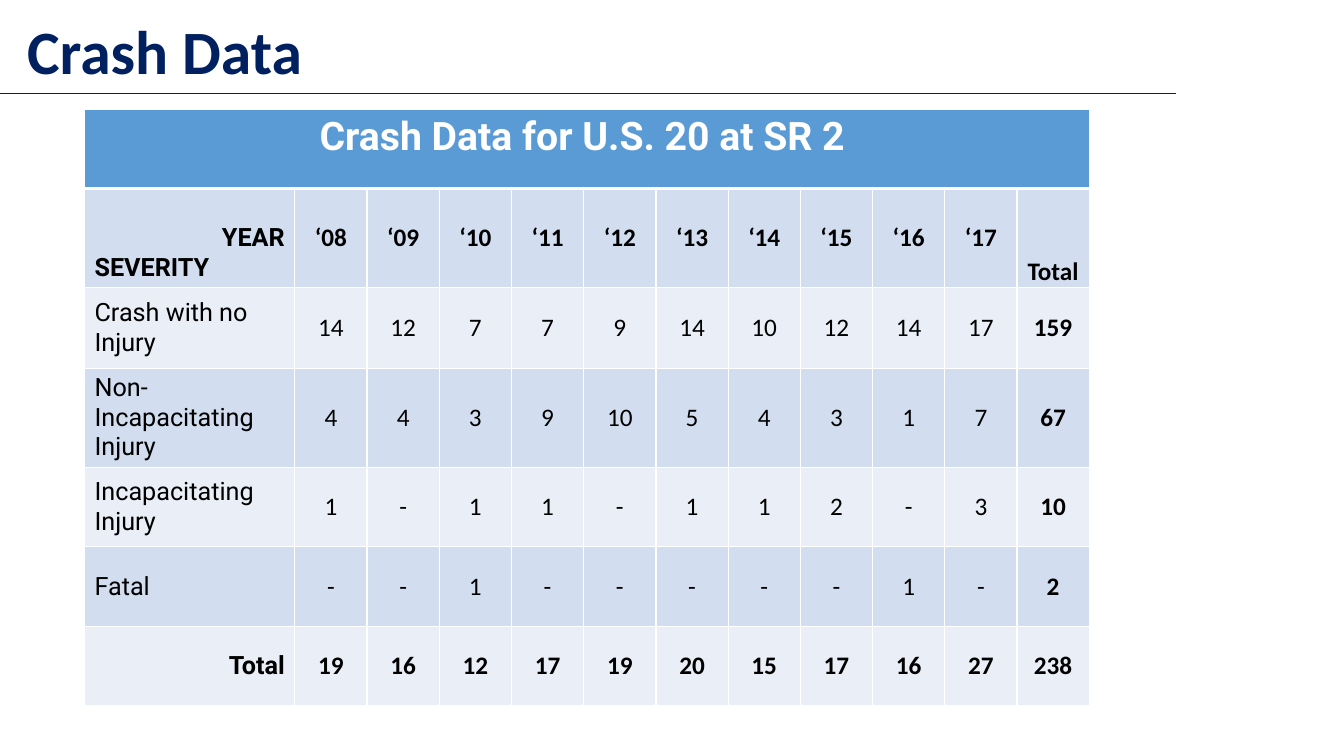
import dataclasses

import pptx
import pptx.dml.color
import pptx.enum.shapes
import pptx.enum.text
import pptx.oxml
import pptx.oxml.ns
import pptx.presentation
import pptx.slide
import pptx.table
import pptx.text.text
import pptx.util

Cm = pptx.util.Cm
Pt = pptx.util.Pt
Align = pptx.enum.text.PP_ALIGN
Anchor = pptx.enum.text.MSO_ANCHOR

COLORS = {
    "navy": "002060",
    "header": "5B9BD5",
    "dark_band": "D2DEEF",
    "light_band": "EAEFF7",
    "white": "FFFFFF",
    "black": "000000",
}
LABEL_WIDTH = Cm(5.3)
YEAR_WIDTH = Cm(1.82)
HEADING_HEIGHT = Cm(2)
YEARS = [f"‘{year:02d}" for year in range(8, 18)]


@dataclasses.dataclass(frozen=True)
class CrashRow:
    label: str
    values: list[str]
    height: float = 2
    bold: bool = False


@dataclasses.dataclass(frozen=True)
class TextStyle:
    font: str = "Calibri"
    size: float = 18
    bold: bool = False
    color: str = "black"
    alignment: Align = Align.CENTER


ROWS = [
    CrashRow("YEAR\nSEVERITY", YEARS + ["Total"], 2.5, True),
    CrashRow("Crash with no Injury", "14 12 7 7 9 14 10 12 14 17 159".split(), 2.03),
    CrashRow("Non-Incapacitating Injury", "4 4 3 9 10 5 4 3 1 7 67".split(), 2.5),
    CrashRow("Incapacitating Injury", "1 - 1 1 - 1 1 2 - 3 10".split()),
    CrashRow("Fatal", "- - 1 - - - - - 1 - 2".split()),
    CrashRow("Total", "19 16 12 17 19 20 15 17 16 27 238".split(), bold=True),
]


def rgb(name: str) -> pptx.dml.color.RGBColor:
    return pptx.dml.color.RGBColor.from_string(COLORS[name])


def set_attributes(target: object, values: dict[str, object]) -> None:
    for name, value in values.items():
        setattr(target, name, value)


def write_text(frame: pptx.text.text.TextFrame, text: str, style: TextStyle) -> None:
    frame.text = text
    for paragraph in frame.paragraphs:
        paragraph.alignment = style.alignment
        for run in paragraph.runs:
            set_attributes(
                run.font,
                {"name": style.font, "size": Pt(style.size), "bold": style.bold},
            )
            run.font.color.rgb = rgb(style.color)


def paint_cell(cell: pptx.table._Cell, fill: str, bottom_width: float = 1) -> None:
    properties = cell._tc.get_or_add_tcPr()
    for side, width in {"L": 1, "R": 1, "T": 1, "B": bottom_width}.items():
        properties.append(
            pptx.oxml.parse_xml(
                f'<a:ln{side} {pptx.oxml.ns.nsdecls("a")} w="{Pt(width)}">'
                f'<a:solidFill><a:srgbClr val="{COLORS["white"]}"/></a:solidFill>'
                f"</a:ln{side}>"
            )
        )
    cell.fill.solid()
    cell.fill.fore_color.rgb = rgb(fill)


def add_title(slide: pptx.slide.Slide) -> None:
    title = slide.shapes.title
    set_attributes(
        title,
        {"left": Cm(0.43), "top": Cm(0), "width": Cm(33.02), "height": Cm(2.34)},
    )
    frame = title.text_frame
    write_text(frame, "Crash Data", TextStyle("Calibri", 44, True, "navy", Align.LEFT))
    set_attributes(
        frame,
        {
            "vertical_anchor": Anchor.BOTTOM,
            "word_wrap": True,
            "auto_size": pptx.enum.text.MSO_AUTO_SIZE.NONE,
        },
    )
    frame.paragraphs[0].line_spacing = 0.9


def add_title_rule(slide: pptx.slide.Slide) -> None:
    rule = slide.shapes.add_connector(
        pptx.enum.shapes.MSO_CONNECTOR.STRAIGHT, Cm(0), Cm(2.34), Cm(29.64), Cm(2.34)
    )
    rule.line.color.rgb = rgb("navy")
    rule.line.width = Pt(0.5)
    rule._element.spPr.append(
        pptx.oxml.parse_xml(f'<a:effectLst {pptx.oxml.ns.nsdecls("a")}/>')
    )


def fill_row(table: pptx.table.Table, index: int, row: CrashRow) -> None:
    table.rows[index].height = Cm(row.height)
    band = "dark_band" if index % 2 else "light_band"
    label = table.cell(index, 0)
    alignment = Align.RIGHT if row.label == "Total" else Align.LEFT
    write_text(
        label.text_frame,
        row.label,
        TextStyle("Roboto", bold=row.bold, alignment=alignment),
    )
    label.vertical_anchor = Anchor.MIDDLE
    paint_cell(label, band)
    for column, value in enumerate(row.values, start=1):
        cell = table.cell(index, column)
        bold = row.bold or column == len(row.values)
        write_text(cell.text_frame, value, TextStyle(bold=bold))
        set_attributes(
            cell,
            {
                "margin_left": Cm(0.18),
                "margin_right": Cm(0.18),
                "margin_top": Cm(0),
                "margin_bottom": Cm(0),
                "vertical_anchor": Anchor.BOTTOM if value == "Total" else Anchor.MIDDLE,
            },
        )
        paint_cell(cell, band)


def add_crash_table(slide: pptx.slide.Slide) -> None:
    column_count = len(YEARS) + 2
    height = HEADING_HEIGHT + sum(Cm(row.height) for row in ROWS)
    width = LABEL_WIDTH + YEAR_WIDTH * (column_count - 1)
    table = slide.shapes.add_table(
        len(ROWS) + 1, column_count, Cm(2.13), Cm(2.75), width, height
    ).table
    for index, column in enumerate(table.columns):
        column.width = YEAR_WIDTH if index else LABEL_WIDTH
    table.rows[0].height = HEADING_HEIGHT
    for cell in table.rows[0].cells:
        paint_cell(cell, "header", 3)
    heading = table.cell(0, 0)
    heading.merge(table.cell(0, column_count - 1))
    write_text(
        heading.text_frame,
        "Crash Data for U.S. 20 at SR 2 ",
        TextStyle("Roboto", 28, True, "white"),
    )
    for index, row in enumerate(ROWS, start=1):
        fill_row(table, index, row)
    corner = table.cell(1, 0)
    corner.vertical_anchor = Anchor.BOTTOM
    corner.text_frame.paragraphs[0].alignment = Align.RIGHT


def main() -> None:
    presentation = pptx.Presentation()
    set_attributes(
        presentation, {"slide_width": Cm(33.87), "slide_height": Cm(19.05)}
    )
    slide = presentation.slides.add_slide(presentation.slide_layouts[5])
    add_title_rule(slide)
    add_title(slide)
    add_crash_table(slide)
    presentation.save("out.pptx")


if __name__ == "__main__":
    main()
